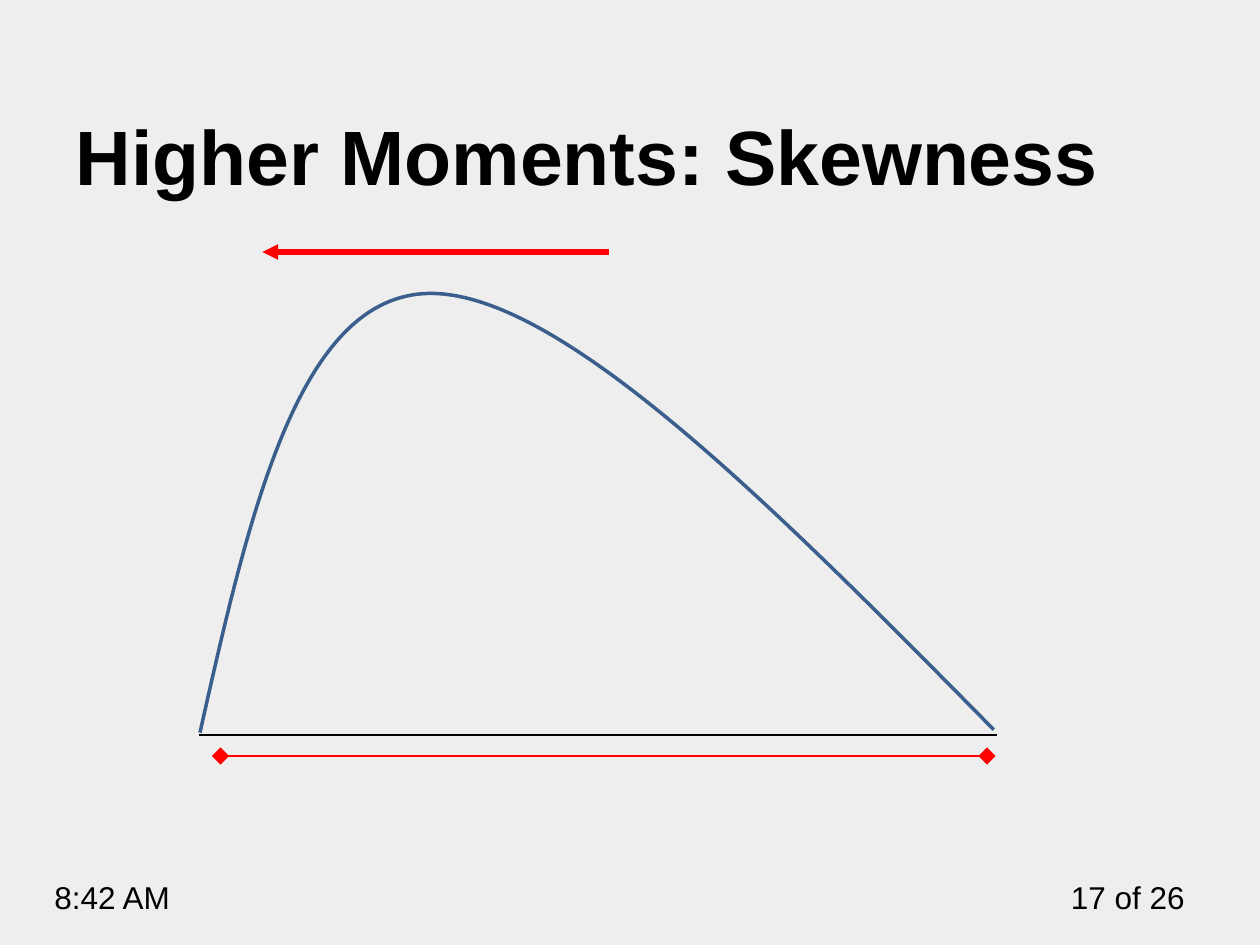
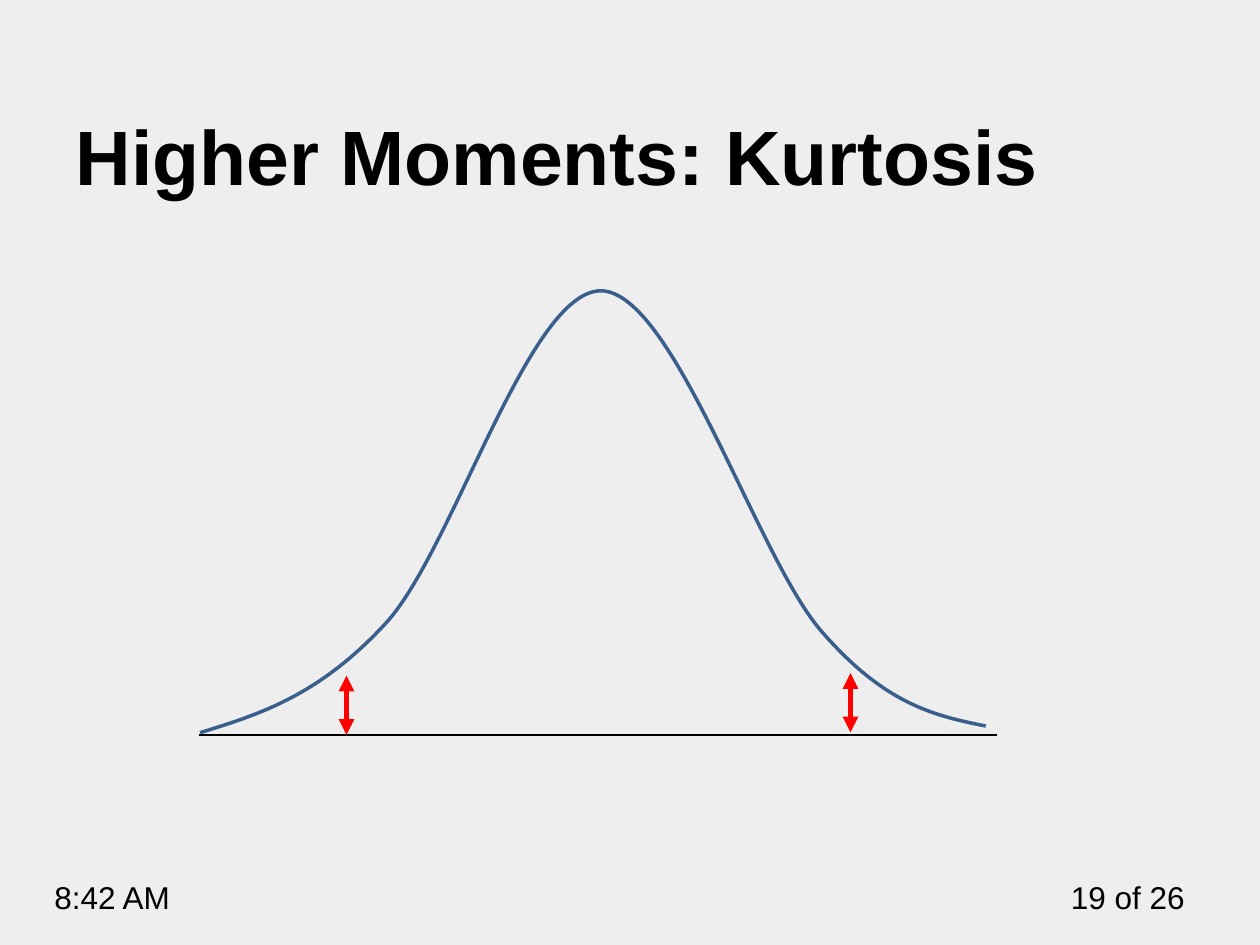
from pptx import Presentation
from pptx.dml.color import RGBColor
from pptx.enum.shapes import MSO_CONNECTOR
from pptx.enum.text import MSO_ANCHOR, MSO_AUTO_SIZE, PP_ALIGN
from pptx.oxml.ns import qn
from pptx.util import Inches, Pt
from lxml.etree import SubElement

COLUMNS, ROWS = 120, 90
CELL = Inches(10) / COLUMNS
FONT = "Arial"
BACKGROUND, INK, CURVE, MARK = "EEEEEE", "000000", "3A5F8C", "FF0000"
BASELINE = 70

SKEWED = [(19.05, 69.78), (23.75, 48.86), (28.45, 27.95), (41.05, 27.95),
          (53.65, 27.95), (74.15, 48.72), (94.65, 69.5)]
BELL = [(19.05, 69.78), (24.75, 68.02), (30.45, 66.25), (36.84, 59.25),
        (43.2, 52.2), (50.4, 27.65), (57.25, 27.7),
        (64.2, 27.8), (72.2, 53.4), (78.35, 60.25),
        (84.4, 67.2), (89.2, 68.2), (93.88, 69.15)]


def grid(*cells):
    return [round(cell * CELL) for cell in cells]


def paint(color_format, hex_color):
    color_format.rgb = RGBColor.from_string(hex_color)


def write(frame, text, size, bold=False, align=PP_ALIGN.LEFT):
    frame.text = text
    frame.word_wrap = True
    paragraph = frame.paragraphs[0]
    paragraph.alignment = align
    for run in paragraph.runs:
        run.font.name = FONT
        run.font.size = Pt(size)
        run.font.bold = bold
        paint(run.font.color, INK)


def add_footer(slide, text, left, width, align=PP_ALIGN.LEFT):
    footer = slide.shapes.add_textbox(*grid(left, 83, width, 4.85))
    write(footer.text_frame, text, 18, align=align)
    footer.text_frame.auto_size = MSO_AUTO_SIZE.SHAPE_TO_FIT_TEXT


def add_title(slide, text):
    title = slide.shapes.title
    title.left, title.top, title.width, title.height = grid(6, 4.7, 108, 15)
    frame = title.text_frame
    write(frame, text, 44, bold=True)
    frame.auto_size = MSO_AUTO_SIZE.NONE
    frame.vertical_anchor = MSO_ANCHOR.BOTTOM


def add_line(slide, start, end, hex_color, weight,
             head=None, tail=None, size="med"):
    line = slide.shapes.add_connector(
        MSO_CONNECTOR.STRAIGHT, *grid(*start, *end))
    paint(line.line.color, hex_color)
    line.line.width = Pt(weight)
    properties = line._element.spPr
    outline = properties.find(qn("a:ln"))
    for tag, ending in (("a:headEnd", head), ("a:tailEnd", tail)):
        if ending:
            SubElement(outline, qn(tag), type=ending, w=size, len=size)
    SubElement(properties, qn("a:effectLst"))


def bend(density):
    outline = next(density._element.iter(qn("a:path")))
    segments = outline.findall(qn("a:lnTo"))
    for first in range(0, len(segments), 3):
        arc = SubElement(outline, qn("a:cubicBezTo"))
        for segment in segments[first:first + 3]:
            arc.append(segment[0])
            outline.remove(segment)


def add_curve(slide, controls):
    start, *others = [grid(*control) for control in controls]
    builder = slide.shapes.build_freeform(*start)
    builder.add_line_segments(others, close=False)
    density = builder.convert_to_shape()
    bend(density)
    density.shadow.inherit = False
    density.fill.background()
    paint(density.line.color, CURVE)
    density.line.width = Pt(2)


def add_moment_slide(deck, moment, number):
    slide = deck.slides.add_slide(deck.slide_layouts.get_by_name("Title Only"))
    add_footer(slide, f"{number} of 26", 100, 14, PP_ALIGN.RIGHT)
    add_footer(slide, "8:42 AM", 4, 19)
    add_title(slide, f"Higher Moments: {moment}")
    add_line(slide, (19, BASELINE), (95, BASELINE), INK, 1)
    return slide


def main():
    deck = Presentation()
    deck.slide_width, deck.slide_height = grid(COLUMNS, ROWS)
    backdrop = deck.slide_master.background.fill
    backdrop.solid()
    paint(backdrop.fore_color, BACKGROUND)

    skewness = add_moment_slide(deck, "Skewness", 17)
    add_line(skewness, (21, 72), (94, 72), MARK, 1,
             "diamond", "diamond", "lg")
    add_curve(skewness, SKEWED)
    add_line(skewness, (58, 24), (25, 24), MARK, 3, tail="triangle")

    kurtosis = add_moment_slide(deck, "Kurtosis", 19)
    add_curve(kurtosis, BELL)
    for column, foot in ((81, 69.75), (33, BASELINE)):
        add_line(kurtosis, (column, foot), (column, foot - 5.65),
                 MARK, 3, "triangle", "triangle")

    deck.save("out.pptx")


if __name__ == "__main__":
    main()
